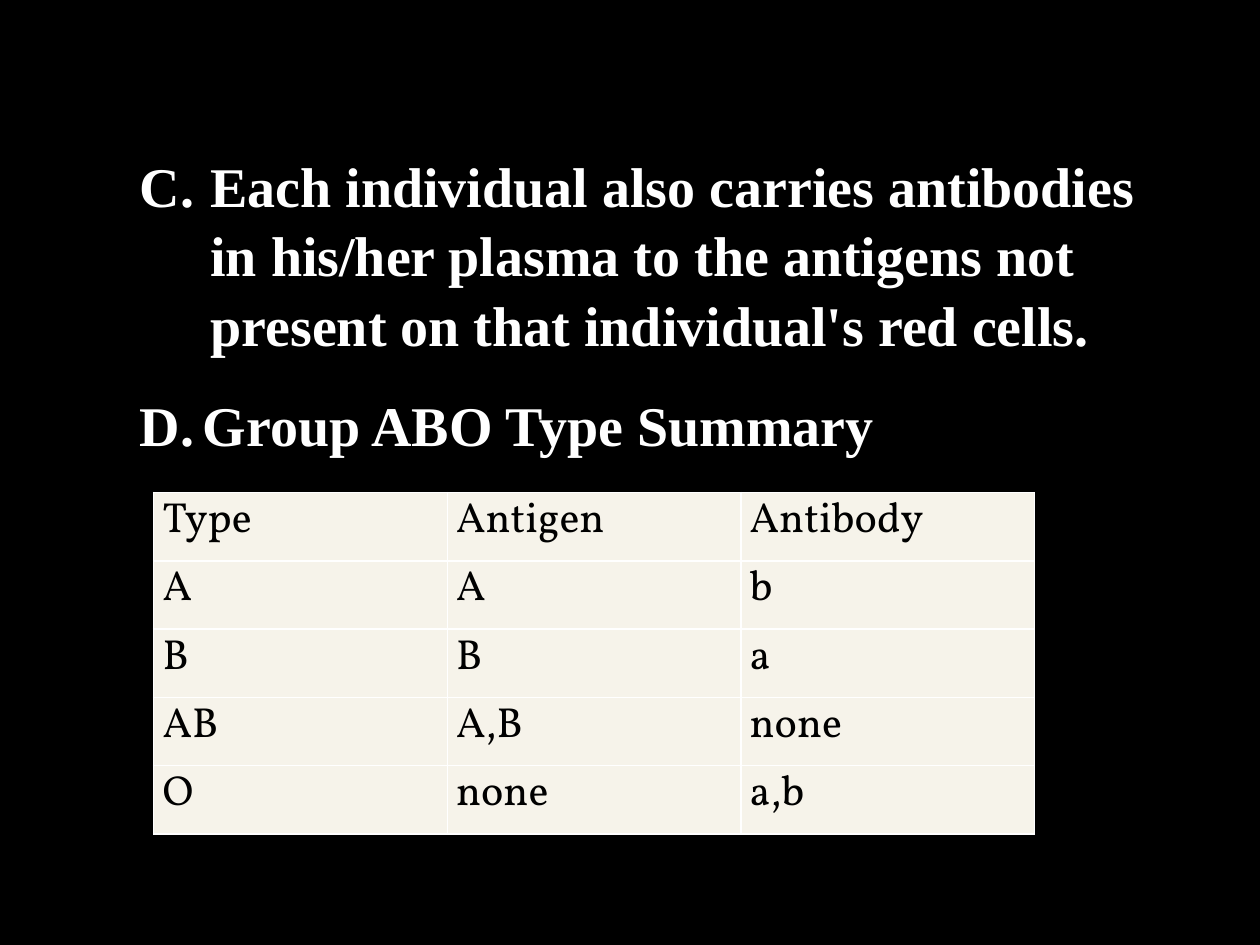
import pptx
import pptx.dml.color
import pptx.enum.text
import pptx.oxml
import pptx.oxml.ns
import pptx.util
from pptx.util import Inches

COLORS = {"background": "000000", "heading": "FFFFFF", "cell": "F6F3EA",
          "cell_text": "000000", "border": "FFFFFF"}
NS = pptx.oxml.ns.nsdecls("a")
BLOOD_TYPES = [
    ("Type", "Antigen", "Antibody"),
    ("A", "A", "b"),
    ("B", "B", "a"),
    ("AB", "A,B", "none"),
    ("O", "none", "a,b"),
]


def rgb(name):
    return pptx.dml.color.RGBColor.from_string(COLORS[name])


def write(p, text, font, size, color, bold=False):
    r = p.add_run()
    r.text = text
    r.font.name = font
    r.font.size = pptx.util.Pt(size)
    r.font.bold = bold
    r.font.color.rgb = rgb(color)


def format_paragraph(p, left, indent, after, *extras):
    """Set spacing and indents, then add bullet or tab elements in schema order."""
    p.line_spacing = 1.04
    p.space_before = pptx.util.Pt(0)
    p.space_after = pptx.util.Pt(after)
    pPr = p._p.get_or_add_pPr()
    pPr.set("marL", str(Inches(left)))
    pPr.set("indent", str(Inches(indent)))
    for xml in extras:
        pPr.append(pptx.oxml.parse_xml(xml))


def add_statements(s, x, y, w, h):
    sp = s.placeholders[1]
    sp.left, sp.top, sp.width, sp.height = x, y, w, h
    tf = sp.text_frame
    tf.word_wrap = True
    tf.auto_size = pptx.enum.text.MSO_AUTO_SIZE.NONE
    tf.vertical_anchor = pptx.enum.text.MSO_ANCHOR.MIDDLE
    style = dict(font="Times New Roman", size=32, color="heading", bold=True)

    p = tf.paragraphs[0]
    format_paragraph(p, 1.06, -0.56, 17,
                     f'<a:buAutoNum {NS} type="alphaUcPeriod" startAt="3"/>')
    write(p, "Each individual also carries antibodies in his/her plasma to the "
             "antigens not present on that individual's red cells.", **style)

    p = tf.add_paragraph()
    format_paragraph(p, 0.5, 0, 0, f"<a:buNone {NS}/>",
                     f'<a:tabLst {NS}><a:tab pos="{Inches(1.5)}" algn="l"/></a:tabLst>')
    write(p, "D.\tGroup ABO Type Summary", **style)


def add_borders(cell):
    tcPr = cell._tc.get_or_add_tcPr()
    for i, side in enumerate(("lnL", "lnR", "lnT", "lnB")):
        tcPr.insert(i, pptx.oxml.parse_xml(
            f'<a:{side} {NS} w="{pptx.util.Pt(1)}"><a:solidFill>'
            f'<a:srgbClr val="{COLORS["border"]}"/></a:solidFill></a:{side}>'))


def add_type_table(s, x, y, w, h):
    rows, cols = len(BLOOD_TYPES), len(BLOOD_TYPES[0])
    table = s.shapes.add_table(rows, cols, x, y, w, h).table
    for i, values in enumerate(BLOOD_TYPES):
        for j, value in enumerate(values):
            cell = table.cell(i, j)
            cell.margin_left = cell.margin_right = Inches(0.07)
            cell.margin_top = cell.margin_bottom = 0
            cell.fill.solid()
            cell.fill.fore_color.rgb = rgb("cell")
            add_borders(cell)
            write(cell.text_frame.paragraphs[0], value, "Vollkorn", 24, "cell_text")


def main():
    prs = pptx.Presentation()
    prs.slide_width, prs.slide_height = Inches(10), Inches(7.5)
    s = prs.slides.add_slide(prs.slide_layouts[1])
    s.background.fill.solid()
    s.background.fill.fore_color.rgb = rgb("background")
    title = s.shapes.title._element
    title.getparent().remove(title)
    add_type_table(s, Inches(1.22), Inches(3.91), Inches(6.99), Inches(2.71))
    add_statements(s, Inches(0.51), Inches(1.16), Inches(9.06), Inches(2.49))
    prs.save("out.pptx")


if __name__ == "__main__":
    main()
